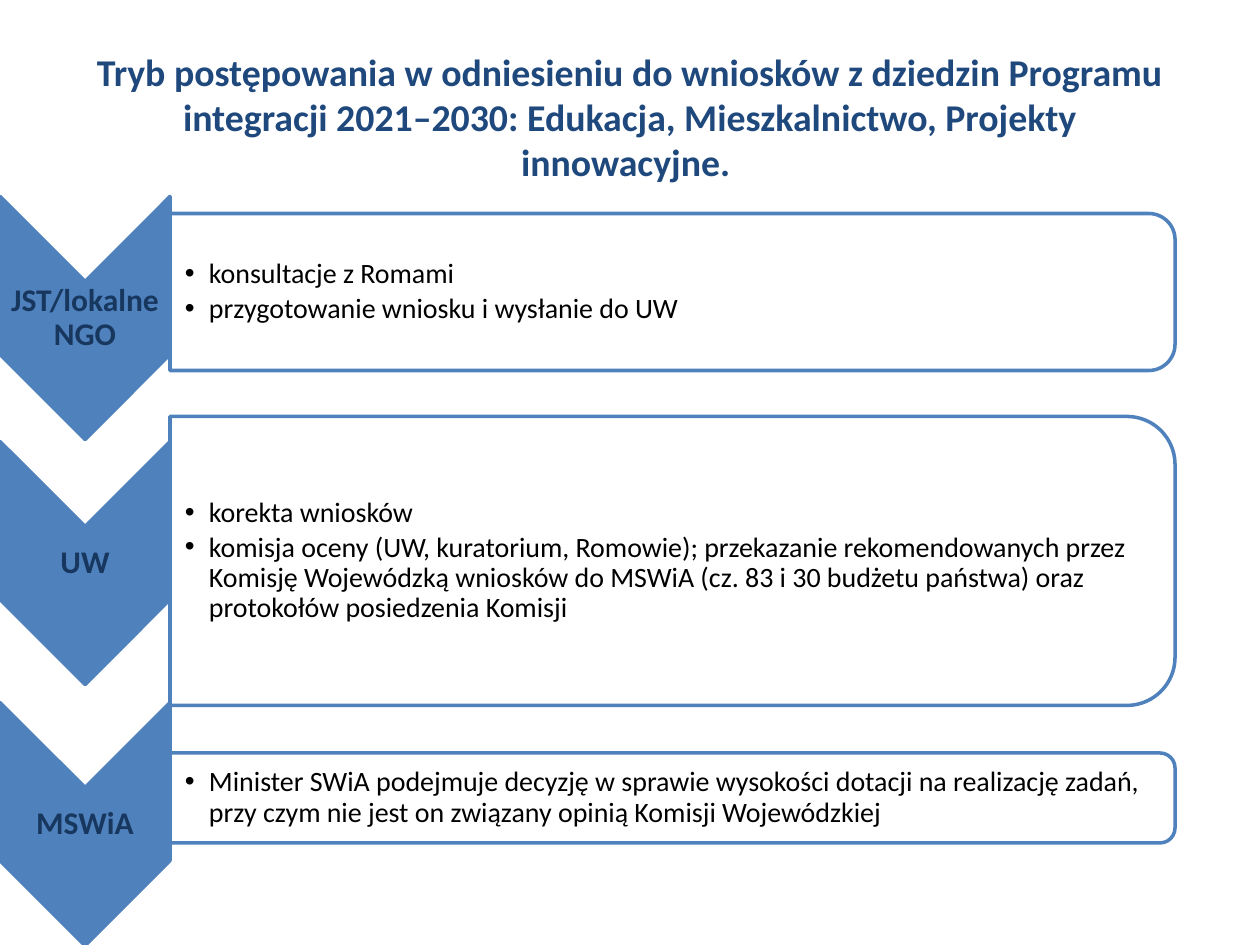
from lxml import etree
from pptx import Presentation
from pptx.dml.color import RGBColor
from pptx.enum.shapes import MSO_SHAPE
from pptx.enum.text import MSO_ANCHOR, MSO_AUTO_SIZE, PP_ALIGN
from pptx.oxml.ns import qn
from pptx.util import Emu, Pt

CHEVRON = MSO_SHAPE.CHEVRON
ROUNDED_PANEL = MSO_SHAPE.ROUND_2_SAME_RECTANGLE
MIDDLE = MSO_ANCHOR.MIDDLE
NO_AUTOFIT = MSO_AUTO_SIZE.NONE
CENTER = PP_ALIGN.CENTER
LEFT = PP_ALIGN.LEFT

BLUE = RGBColor(0x4F, 0x81, 0xBD)
TITLE_BLUE = RGBColor(0x1F, 0x49, 0x7D)
LABEL_BLUE = RGBColor(0x17, 0x37, 0x5E)
WHITE = RGBColor(0xFF, 0xFF, 0xFF)
BLACK = RGBColor(0, 0, 0)

EMU_PER_PX = 914400 / 126
TITLE_ONLY_LAYOUT = 5
CHEVRON_WIDTH, CHEVRON_HEIGHT = 170, 243
LABEL_HEIGHT = 73
PANEL_WIDTH = 1005
CORNER_INSET = 0.05
LIST_INDENT = 24

TITLE = ("Tryb postępowania w odniesieniu do wniosków z dziedzin Programu integracji "
         "2021–2030: Edukacja, Mieszkalnictwo, Projekty innowacyjne. ")
STAGES = [
    ("JST/lokalne NGO", 318, 292, 157,
     ["konsultacje z Romami", "przygotowanie wniosku i wysłanie do UW"]),
    ("UW", 563, 561, 289,
     ["korekta wniosków",
      "komisja oceny (UW, kuratorium, Romowie); przekazanie rekomendowanych przez "
      "Komisję Wojewódzką wniosków do MSWiA (cz. 83 i 30 budżetu państwa) oraz "
      "protokołów posiedzenia Komisji"]),
    ("MSWiA", 824, 798, 90,
     ["Minister SWiA podejmuje decyzję w sprawie wysokości dotacji na realizację zadań, "
      "przy czym nie jest on związany opinią Komisji Wojewódzkiej"]),
]


def px(length):
    return Emu(round(length * EMU_PER_PX))


def assign(target, values):
    for name, value in values.items():
        setattr(target, name, value)


class SlideBuilder:
    title_font = {"name": "Calibri", "size": Pt(21.6), "bold": True}
    label_font = {"name": "Calibri", "size": Pt(18), "bold": True}
    list_font = {"name": "Calibri", "size": Pt(16), "bold": False}
    label_paragraph = {"alignment": CENTER, "line_spacing": 0.9}
    list_paragraph = {"alignment": LEFT, "line_spacing": 0.9, "space_after": Pt(2.4), "level": 1}

    def __init__(self, slide):
        self.slide = slide

    def styled_run(self, paragraph, text, font, color):
        run = paragraph.add_run()
        run.text = text
        assign(run.font, font)
        run.font.color.rgb = color

    def title(self, text):
        shape = self.slide.shapes.title
        assign(shape, {"left": px(63), "top": px(38), "width": px(1134), "height": px(157)})
        assign(shape.text_frame, {"auto_size": NO_AUTOFIT, "vertical_anchor": MIDDLE})
        paragraph = shape.text_frame.paragraphs[0]
        paragraph.alignment = CENTER
        self.styled_run(paragraph, text, self.title_font, TITLE_BLUE)

    def turned_shape(self, kind, left, middle, width, height, fill):
        shape = self.slide.shapes.add_shape(
            kind, px(left + (width - height) / 2), px(middle - width / 2),
            px(height), px(width))
        shape.rotation = 90
        shape.shadow.inherit = False
        shape.fill.solid()
        shape.fill.fore_color.rgb = fill
        shape.line.color.rgb = BLUE
        shape.line.width = Pt(2)
        return shape

    def chevron(self, middle):
        self.turned_shape(CHEVRON, 0, middle, CHEVRON_WIDTH, CHEVRON_HEIGHT, BLUE)

    def panel(self, middle, height):
        shape = self.turned_shape(
            ROUNDED_PANEL, CHEVRON_WIDTH, middle, PANEL_WIDTH, height, WHITE)
        color = shape.element.spPr.find(qn("a:solidFill"))[0]
        etree.SubElement(color, qn("a:alpha"), val="90000")

    def text_box(self, left, middle, width, height, left_margin):
        shape = self.slide.shapes.add_textbox(
            px(left), px(middle - height / 2), px(width), px(height))
        frame = shape.text_frame
        assign(frame, {"word_wrap": True, "auto_size": NO_AUTOFIT, "vertical_anchor": MIDDLE,
                       "margin_left": px(left_margin), "margin_top": px(1),
                       "margin_right": px(1), "margin_bottom": px(1)})
        return frame

    def label(self, text, middle):
        frame = self.text_box(0, middle, CHEVRON_WIDTH, LABEL_HEIGHT, 1)
        paragraph = frame.paragraphs[0]
        assign(paragraph, self.label_paragraph)
        self.styled_run(paragraph, text, self.label_font, LABEL_BLUE)

    def bullet_list(self, items, middle, panel_height):
        inset = panel_height * CORNER_INSET
        frame = self.text_box(CHEVRON_WIDTH, middle, PANEL_WIDTH - inset,
                              panel_height - 2 * inset, 15)
        for index, item in enumerate(items):
            paragraph = frame.add_paragraph() if index else frame.paragraphs[0]
            assign(paragraph, self.list_paragraph)
            properties = paragraph._p.get_or_add_pPr()
            properties.set("marL", str(px(LIST_INDENT)))
            properties.set("indent", str(-px(LIST_INDENT)))
            etree.SubElement(properties, qn("a:buFont"), typeface="Arial")
            etree.SubElement(properties, qn("a:buChar"), char="•")
            self.styled_run(paragraph, item, self.list_font, BLACK)


def main():
    presentation = Presentation()
    assign(presentation, {"slide_width": px(1260), "slide_height": px(945)})
    layout = presentation.slide_layouts[TITLE_ONLY_LAYOUT]
    builder = SlideBuilder(presentation.slides.add_slide(layout))
    builder.title(TITLE)
    for name, chevron_middle, panel_middle, panel_height, items in STAGES:
        builder.chevron(chevron_middle)
        builder.label(name, chevron_middle)
        builder.panel(panel_middle, panel_height)
        builder.bullet_list(items, panel_middle, panel_height)
    presentation.save("out.pptx")


if __name__ == "__main__":
    main()
